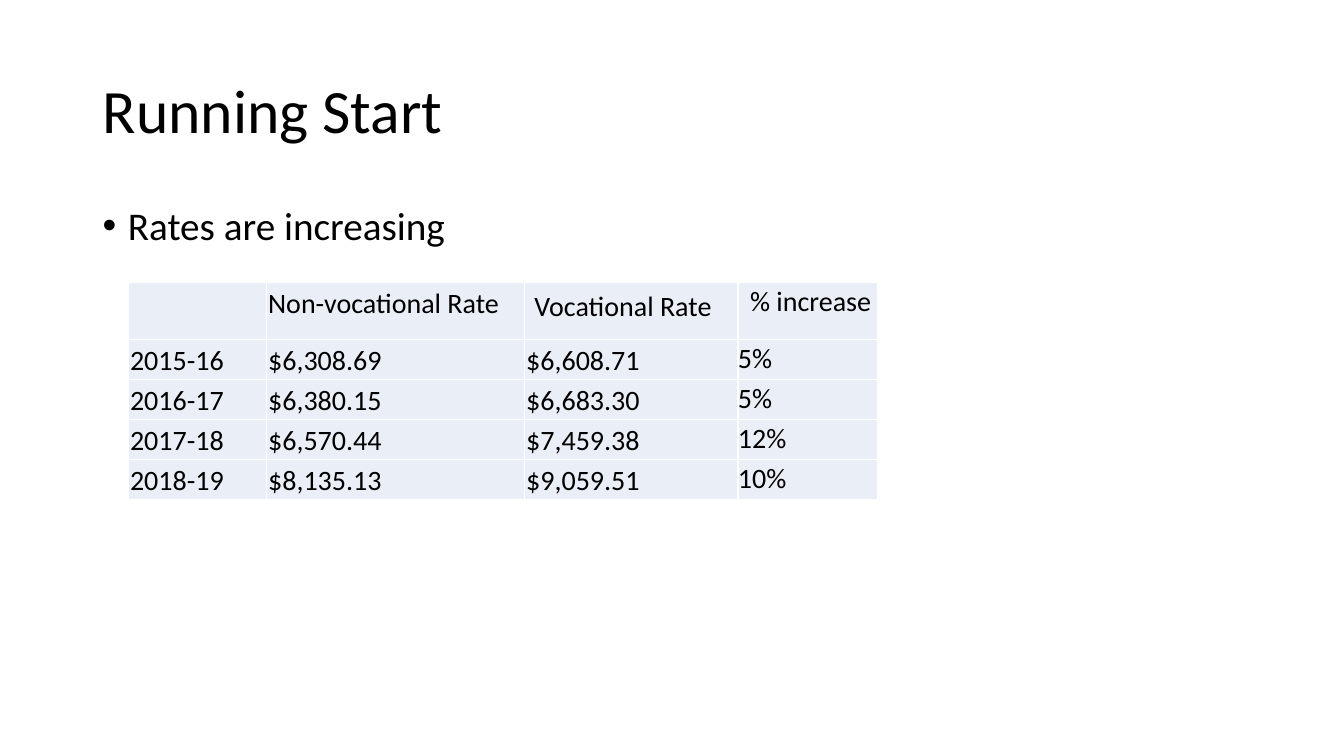
import pptx
import pptx.dml.color
import pptx.enum.text
import pptx.oxml
import pptx.oxml.ns
import pptx.util
from pptx.util import Inches

BLACK = pptx.dml.color.RGBColor(0x00, 0x00, 0x00)
WHITE = pptx.dml.color.RGBColor(0xFF, 0xFF, 0xFF)
PALE = pptx.dml.color.RGBColor(0xEA, 0xEF, 0xF7)
FONT = "Calibri"

WIDTHS = [1.37, 2.56, 2.12, 1.38]
HEIGHTS = [0.57, 0.39, 0.39, 0.39, 0.36]
RATES = [
    ["", "Non-vocational Rate", "Vocational Rate", "% increase"],
    ["2015-16", "$6,308.69", "$6,608.71", "5%"],
    ["2016-17", "$6,380.15", "$6,683.30", "5%"],
    ["2017-18", "$6,570.44", "$7,459.38", "12%"],
    ["2018-19", "$8,135.13", "$9,059.51", "10%"],
]


def style(para, size, spacing):
    para.font.name = FONT
    para.font.size = pptx.util.Pt(size)
    para.font.color.rgb = BLACK
    para.line_spacing = spacing


def add_text(slide, box, text, size, anchor):
    frame = slide.shapes.add_textbox(*map(Inches, box)).text_frame
    frame.word_wrap = True
    frame.vertical_anchor = anchor
    para = frame.paragraphs[0]
    para.text = text
    style(para, size, 0.9)
    return para


def add_bullet(para):
    props = para._p.get_or_add_pPr()
    props.set("marL", str(Inches(0.25)))
    props.set("indent", str(Inches(-0.25)))
    names = pptx.oxml.ns.nsdecls("a")
    props.append(pptx.oxml.parse_xml(f'<a:buFont {names} typeface="Arial"/>'))
    props.append(pptx.oxml.parse_xml(f'<a:buChar {names} char="•"/>'))


def add_border(cell):
    props = cell._tc.get_or_add_tcPr()
    names = pptx.oxml.ns.nsdecls("a")
    for index, side in enumerate(["lnL", "lnR", "lnT", "lnB"]):
        line = pptx.oxml.parse_xml(
            f'<a:{side} {names} w="{pptx.util.Pt(1)}"><a:solidFill>'
            f'<a:srgbClr val="{WHITE}"/></a:solidFill></a:{side}>'
        )
        props.insert(index, line)


def set_insets(cell, left, right, top, bottom):
    cell.margin_left = Inches(left)
    cell.margin_right = Inches(right)
    cell.margin_top = Inches(top)
    cell.margin_bottom = Inches(bottom)


def insets(row, col):
    """Return the left, right, top and bottom insets of a cell."""
    if col == 3:
        return (0.12 if row == 0 else 0, 0, 0, 0)
    if row == 0 and col == 2:
        return (0.1, 0.1, 0.05, 0.05)
    return (0.02,) * 4


def add_rates(slide):
    box = map(Inches, (1.27, 2.8, sum(WIDTHS), sum(HEIGHTS)))
    table = slide.shapes.add_table(len(HEIGHTS), len(WIDTHS), *box).table
    for column, width in zip(table.columns, WIDTHS):
        column.width = Inches(width)
    for row, height in zip(table.rows, HEIGHTS):
        row.height = Inches(height)
    for row, values in enumerate(RATES):
        for col, value in enumerate(values):
            cell = table.cell(row, col)
            cell.text = value
            cell.fill.solid()
            cell.fill.fore_color.rgb = PALE
            set_insets(cell, *insets(row, col))
            add_border(cell)
            para = cell.text_frame.paragraphs[0]
            style(para, 20, 1.07)
            para.font.bold = False


def main():
    deck = pptx.Presentation()
    deck.slide_width = Inches(13.33)
    deck.slide_height = Inches(7.5)
    slide = deck.slides.add_slide(deck.slide_layouts[6])
    anchor = pptx.enum.text.MSO_ANCHOR
    add_text(slide, (0.92, 0.4, 11.5, 1.45), "Running Start", 44, anchor.MIDDLE)
    point = add_text(
        slide, (0.92, 2, 11.5, 4.76), "Rates are increasing", 28, anchor.TOP
    )
    point.space_before = pptx.util.Pt(10)
    add_bullet(point)
    add_rates(slide)
    deck.save("out.pptx")


if __name__ == "__main__":
    main()
